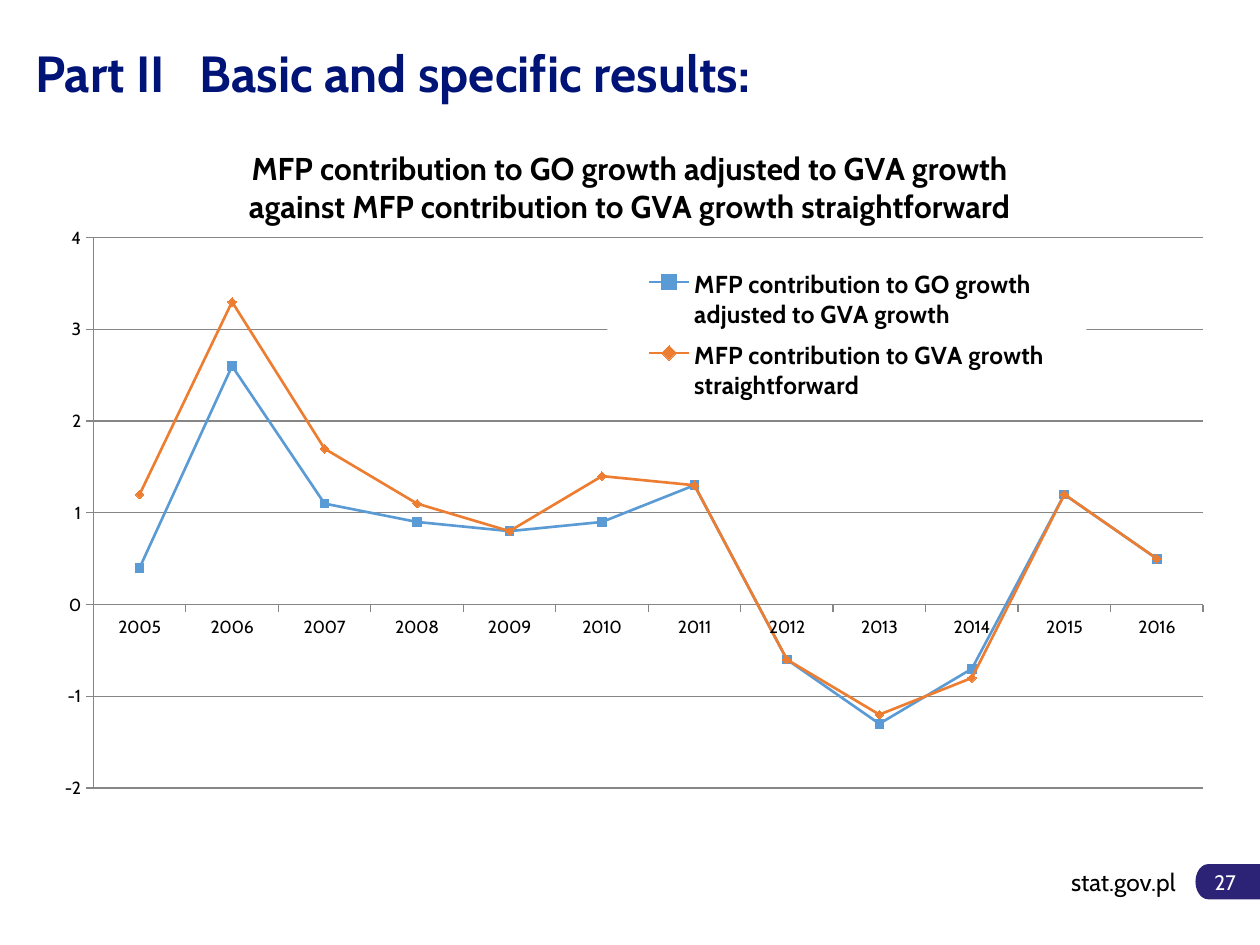
import pptx
import pptx.chart.data
import pptx.dml.color
import pptx.enum.chart
import pptx.enum.shapes
import pptx.enum.text
import pptx.oxml
import pptx.oxml.ns
import pptx.util

Cm, Pt, qn = pptx.util.Cm, pptx.util.Pt, pptx.oxml.ns.qn
ALIGN = pptx.enum.text.PP_ALIGN
XL = pptx.enum.chart

# Content
FONT = "Cabin"
HEADING = "Part II\tBasic and specific results:"
SITE, PAGE_NUMBER = "stat.gov.pl", "27"
CHART_TITLE = ["MFP contribution to GO growth adjusted to GVA growth",
               "against MFP contribution to GVA growth straightforward"]
YEARS = [str(year) for year in range(2005, 2017)]
SERIES = [
    ("MFP contribution to GO growth adjusted to GVA growth", "5B9BD5",
     XL.XL_MARKER_STYLE.SQUARE,
     [0.4, 2.6, 1.1, 0.9, 0.8, 0.9, 1.3, -0.6, -1.3, -0.7, 1.2, 0.5]),
    ("MFP contribution to GVA growth straightforward", "ED7D31",
     XL.XL_MARKER_STYLE.DIAMOND,
     [1.2, 3.3, 1.7, 1.1, 0.8, 1.4, 1.3, -0.6, -1.2, -0.8, 1.2, 0.5]),
]
# Fractions of the chart frame: left, top, width, height
LAYOUTS = {
    "title": (0.17, 0.04),
    "plotArea": (0.04, 0.17, 0.95, 0.76),
    "legend": (0.48, 0.2, 0.41, 0.21),
}


def color(text):
    return pptx.dml.color.RGBColor.from_string(text)


def apply(target, formats):
    for name, value in formats.items():
        setattr(target, name, value)


def set_font(font, size, shade="000000", bold=False):
    apply(font, {"name": FONT, "size": Pt(size), "bold": bold})
    font.color.rgb = color(shade)


def set_fill(part, shade):
    part.fill.solid()
    part.fill.fore_color.rgb = color(shade)


def set_line(line, shade, width):
    line.color.rgb = color(shade)
    line.width = Pt(width)


def write(box, text, size, shade, align, bold=False, right=0):
    frame = box.text_frame
    apply(frame, {"word_wrap": True, "margin_left": 0, "margin_right": Cm(right),
                  "vertical_anchor": pptx.enum.text.MSO_ANCHOR.MIDDLE})
    para = frame.paragraphs[0]
    para.alignment = align
    span = para.add_run()
    span.text = text
    set_font(span.font, size, shade, bold)
    return para


def place(chart, tag, fractions):
    """Give a chart part a manual layout."""
    part = chart.element.find(".//" + qn("c:" + tag))
    for old in part.findall(qn("c:layout")):
        part.remove(old)
    inner = '<c:layoutTarget val="inner"/>' if tag == "plotArea" else ""
    modes = '<c:xMode val="edge"/><c:yMode val="edge"/>'
    sizes = "".join(f'<c:{key} val="{value}"/>' for key, value in zip("xywh", fractions))
    layout = pptx.oxml.parse_xml(
        f'<c:layout {pptx.oxml.ns.nsdecls("c")}><c:manualLayout>'
        f'{inner}{modes}{sizes}</c:manualLayout></c:layout>')
    overlay = part.find(qn("c:overlay"))
    part.insert(0 if overlay is None else part.index(overlay), layout)


deck = pptx.Presentation()
apply(deck, {"slide_width": Cm(25.4), "slide_height": Cm(19.05)})
page = deck.slides.add_slide(deck.slide_layouts[6])

# Footer: page number badge and site name
badge = page.shapes.add_shape(pptx.enum.shapes.MSO_SHAPE.FLOWCHART_TERMINATOR,
                              Cm(24.1), Cm(17.42), Cm(1.6), Cm(0.71))
badge.shadow.inherit = False
set_fill(badge, "2C2276")
badge.line.fill.background()
write(badge, PAGE_NUMBER, 12, "FFFFFF", ALIGN.RIGHT, right=0.71)
site = page.shapes.add_textbox(Cm(20.7), Cm(17.35), Cm(3), Cm(0.86))
write(site, SITE, 14, "000000", ALIGN.RIGHT)

# Heading, with a tab stop between the part number and its name
heading = page.shapes.add_textbox(Cm(0.71), Cm(0.53), Cm(24), Cm(2))
para = write(heading, HEADING, 29, "001377", ALIGN.LEFT, bold=True)
para._p.get_or_add_pPr().append(pptx.oxml.parse_xml(
    f'<a:tabLst {pptx.oxml.ns.nsdecls("a")}><a:tab pos="{Cm(3.32)}" algn="l"/></a:tabLst>'))
para.line_spacing = 0.9

# Chart
data = pptx.chart.data.CategoryChartData()
data.categories = YEARS
for name, shade, marker, values in SERIES:
    data.add_series(name, values)
chart = page.shapes.add_chart(XL.XL_CHART_TYPE.LINE_MARKERS, Cm(0.94), Cm(2.31),
                              Cm(23.55), Cm(14.6), data).chart
set_font(chart.font, 10)
chart.plots[0].vary_by_categories = False
for series, (name, shade, marker, values) in zip(chart.plots[0].series, SERIES):
    series.smooth = False
    set_line(series.format.line, shade, 1.5)
    apply(series.marker, {"style": marker, "size": 5})
    set_fill(series.marker.format, shade)
    set_line(series.marker.format.line, shade, 0.75)

# Chart title
chart.has_title = True
frame = chart.chart_title.text_frame
for number, text in enumerate(CHART_TITLE):
    para = frame.add_paragraph() if number else frame.paragraphs[0]
    span = para.add_run()
    span.text = text
    set_font(span.font, 18, bold=True)

# Axes
apply(chart.value_axis, {"minimum_scale": -2, "maximum_scale": 4, "major_unit": 1,
                         "has_major_gridlines": True})
apply(chart.value_axis.tick_labels, {"number_format": "General",
                                     "number_format_is_linked": False})
set_line(chart.value_axis.major_gridlines.format.line, "868686", 0.75)
for axis in (chart.category_axis, chart.value_axis):
    apply(axis, {"major_tick_mark": XL.XL_TICK_MARK.OUTSIDE,
                 "minor_tick_mark": XL.XL_TICK_MARK.NONE})
    set_line(axis.format.line, "868686", 0.75)
    set_font(axis.tick_labels.font, 10)

# Legend on a white ground over the plot
chart.has_legend = True
apply(chart.legend, {"position": XL.XL_LEGEND_POSITION.RIGHT, "include_in_layout": True})
set_font(chart.legend.font, 14, bold=True)
ground = pptx.oxml.parse_xml(
    f'<c:spPr {pptx.oxml.ns.nsdecls("c", "a")}><a:solidFill>'
    '<a:srgbClr val="FFFFFF"/></a:solidFill></c:spPr>')
chart.legend.font  # text properties follow the ground in the legend
chart.element.find(".//" + qn("c:legend")).find(qn("c:txPr")).addprevious(ground)

for tag, fractions in LAYOUTS.items():
    place(chart, tag, fractions)

deck.save("out.pptx")
